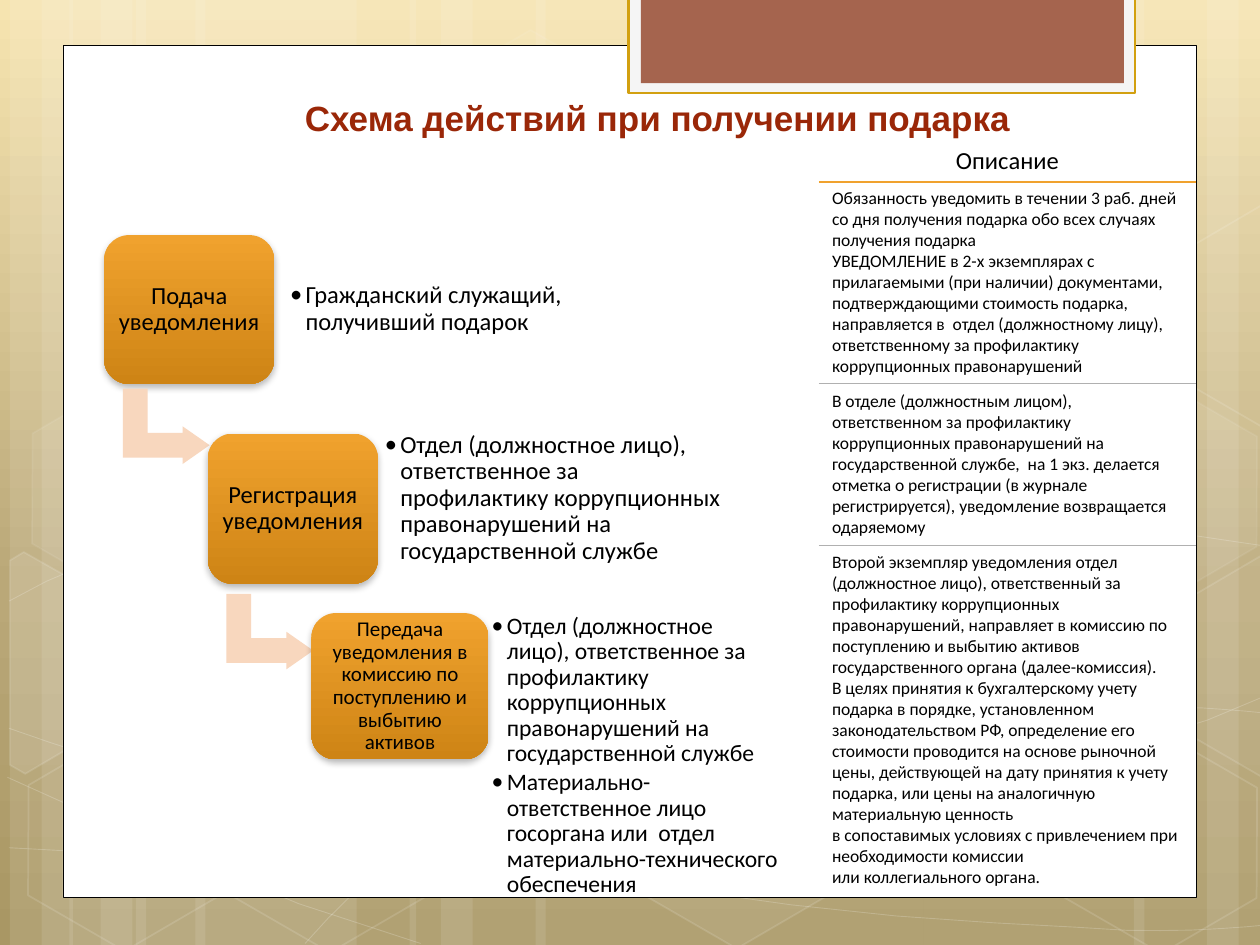
from lxml import etree
from pptx import Presentation
from pptx import util as u
from pptx.dml.color import RGBColor
from pptx.enum import shapes, text
from pptx.oxml.ns import qn

WHITE = RGBColor(0xFF, 0xFF, 0xFF)
BLACK = RGBColor(0, 0, 0)
SMOKE = RGBColor(0xF5, 0xF5, 0xF5)
GOLD = RGBColor(0xD2, 0xA0, 0x10)
BRICK = RGBColor(0xA5, 0x64, 0x4E)
RED = RGBColor(0x9A, 0x27, 0x08)
AMBER = RGBColor(0xF0, 0xA2, 0x2E)
OCHRE = RGBColor(0xCE, 0x84, 0x15)
PEACH = RGBColor(0xF8, 0xD7, 0xBE)
GREY = RGBColor(0xB0, 0xB0, 0xB0)
SAND = [(0, RGBColor(0xF6, 0xE4, 0xB0)), (62, RGBColor(0xBA, 0xA8, 0x78)),
        (100, RGBColor(0xA9, 0x97, 0x64))]
KIND = shapes.MSO_SHAPE
MID, TOP = text.MSO_ANCHOR.MIDDLE, text.MSO_ANCHOR.TOP
CENTER, LEFT = text.PP_ALIGN.CENTER, text.PP_ALIGN.LEFT

# Backdrop, in cm: stripes (left, width)
STRIPES = [(2.74, 4.45), (0.2, 1.27), (0.84, 2.11), (3.94, 4.45), (1.4, 1.27), (2.03, 2.11),
           (18.62, 4.45), (24.33, 1.27), (22.86, 2.11), (10.8, 7.82), (8.26, 1.27), (8.89, 2.11)]
# Each curve: a start, then three points per Bezier piece
CURVES = [
    [(0.18, 17.09), (1.55, 17.17), (2.92, 17.25), (4.83, 17.22), (6.73, 17.2), (9.09, 17.15),
     (11.63, 16.89), (14.17, 16.63), (17.78, 16.15), (20.12, 15.67), (22.43, 15.19),
     (24.82, 14.43), (25.58, 14)],
    [(0.18, 12.12), (0.91, 11.71), (1.65, 11.33), (3.07, 10.95), (4.52, 10.57), (6.58, 10.01),
     (8.81, 9.83), (11.07, 9.68), (13.82, 9.63), (16.61, 9.83), (19.41, 10.03),
     (24.05, 10.82), (25.58, 11.02)],
    [(0.15, 15.67), (3.23, 17.07), (6.27, 18.47), (8.48, 19.02)],
    [(0.18, 14.68), (0.97, 14.96), (1.78, 15.24), (3.25, 15.65), (4.72, 16.03), (6.93, 16.66),
     (9.07, 17.09), (11.18, 17.53), (13.84, 17.98), (15.95, 18.24), (18.06, 18.52),
     (20.32, 18.62), (21.67, 18.69), (22.99, 18.8), (23.34, 18.75), (24, 18.75),
     (24.66, 18.72), (25.12, 18.69), (25.58, 18.64)],
    [(6.15, 19.02), (6.6, 18.52), (7.06, 18.01), (7.67, 17.55), (8.28, 17.09), (9.14, 16.59),
     (9.86, 16.23), (10.57, 15.88), (11, 15.72), (11.94, 15.47), (12.85, 15.21),
     (14.55, 14.86), (15.44, 14.68), (16.36, 14.5), (16.48, 14.5), (17.27, 14.45),
     (18.06, 14.38), (19.3, 14.3), (20.17, 14.27), (21.5, 14.25), (22.9, 14.27),
     (24.21, 14.27), (24.66, 14.3), (25.1, 14.33), (25.55, 14.38)]]
# Hexagons: left, top, fill and line opacity
HEXES = [(8.48, 0.91, 4, 8), (12.62, 14.96, 6, 12), (0.28, 15.01, 0, 12), (0.36, 7.92, 7, 8),
         (4.42, 15.04, 0, 12), (21.18, 15.06, 0, 12), (21.18, 7.98, 7, 8)]
# Hexagons cut by the slide edge: fill opacity, corners
CUTS = [(10, [(0.2, 11.3), (0.48, 11.13), (2.44, 12.24), (2.41, 14.48), (0.51, 15.6), (0.2, 15.42)]),
        (4, [(23.52, 12.32), (25.43, 11.2), (25.63, 11.33), (25.63, 15.57), (25.45, 15.67), (23.52, 14.55)]),
        (0, [(23.52, 5.26), (25.43, 4.14), (25.65, 4.27), (25.63, 8.51), (25.45, 8.61), (23.52, 7.49)])]

OFFICE = ("Отдел (должностное лицо), ответственное за профилактику коррупционных "
          "правонарушений на государственной службе")
# Steps: label, size, box, bullet box, bullet size, anchor, bullets
STEPS = [
    ("Подача уведомления", 14, (2.1, 4.74, 3.43, 3), (5.7, 5.53, 7.42, 1.4), 14, MID,
     ["Гражданский служащий, получивший подарок"]),
    ("Регистрация уведомления", 14, (4.19, 8.74, 3.43, 3.03), (7.61, 8.36, 7.09, 3.38), 14, MID,
     [OFFICE]),
    ("Передача уведомления в комиссию по поступлению и выбытию активов", 12,
     (6.28, 12.36, 3.57, 2.95), (9.76, 12.23, 6.07, 5.85), 13.5, TOP,
     [OFFICE, "Материально-ответственное лицо госоргана или  отдел "
      "материально-технического обеспечения"])]
# Table rows: height, anchor, paragraphs
ROWS = [
    (0.84, TOP, ["Описание"]),
    (4.06, TOP, [
        "Обязанность уведомить в течении 3 раб. дней  со дня получения подарка обо всех "
        "случаях получения подарка",
        "УВЕДОМЛЕНИЕ в 2-х экземплярах с прилагаемыми (при наличии) документами, "
        "подтверждающими стоимость подарка, направляется в  отдел (должностному лицу), "
        "ответственному за профилактику коррупционных правонарушений"]),
    (3.27, MID, [
        "В отделе (должностным лицом), ответственном за профилактику коррупционных "
        "правонарушений на государственной службе,  на 1 экз. делается отметка о регистрации "
        "(в журнале регистрируется), уведомление возвращается одаряемому"]),
    (7.04, TOP, [
        "Второй экземпляр уведомления отдел (должностное лицо), ответственный за профилактику "
        "коррупционных правонарушений, направляет в комиссию по поступлению и выбытию активов  "
        "государственного органа (далее-комиссия).",
        "В целях принятия к бухгалтерскому учету подарка в порядке, установленном "
        "законодательством РФ, определение его стоимости проводится на основе рыночной цены, "
        "действующей на дату принятия к учету подарка, или цены на аналогичную материальную "
        "ценность\nв сопоставимых условиях с привлечением при необходимости комиссии\n"
        "или коллегиального органа."])]


def add(root, tag, **atts):
    return etree.SubElement(root, qn(tag), {k: str(v) for k, v in atts.items()})


def blend(fill, root, stops):
    """Top-down gradient."""
    fill.gradient()
    fill.gradient_angle = 270
    stack = root.find(".//" + qn("a:gsLst"))
    stack[:] = []
    for pos, tone in stops:
        add(add(stack, "a:gs", pos=pos * 1000), "a:srgbClr", val=tone)


def style(shape, fill=None, line=None, width=0.5, clear=None, faint=None):
    """Flat look; clear and faint are fill and line opacity in percent."""
    shape.shadow.inherit = False
    for part, tone, alpha, tag in ((shape.fill, fill, clear, "a:solidFill"),
                                   (shape.line.fill, line, faint, "a:ln/a:solidFill")):
        if tone is None or alpha == 0:
            part.background()
            continue
        part.solid()
        part.fore_color.rgb = tone
        if alpha:
            steps = "/".join(qn(t) for t in tag.split("/"))
            add(shape._element.spPr.find(steps)[0], "a:alpha", val=alpha * 1000)
    if line is not None:
        shape.line.width = u.Pt(width)
    return shape


def block(slide, kind, spot, **look):
    return style(slide.shapes.add_shape(kind, *map(u.Cm, spot)), **look)


def trace(slide, dots, closed, **look):
    pts = [(u.Cm(x), u.Cm(y)) for x, y in dots]
    pen = slide.shapes.build_freeform(*pts[0])
    pen.add_line_segments(pts[1:], close=closed)
    return style(pen.convert_to_shape(), **look)


def bend(pts, n=3):
    """Points along joined cubic Bezier pieces."""
    dots = [pts[0]]
    for i in range(0, len(pts) - 1, 3):
        for t in (k / n for k in range(1, n + 1)):
            mix = ((1 - t) ** 3, 3 * t * (1 - t) ** 2, 3 * t * t * (1 - t), t ** 3)
            dots.append(tuple(sum(m * p[a] for m, p in zip(mix, pts[i:i + 4])) for a in (0, 1)))
    return dots


def write(frame, paras, size, align=LEFT, space=0.9, bullet=False, after=0,
          face="Calibri", tone=BLACK, bold=False):
    for i, words in enumerate(paras):
        para = frame.add_paragraph() if i else frame.paragraphs[0]
        para.alignment, para.line_spacing, para.space_after = align, space, u.Pt(after)
        if bullet:
            props = para._p.get_or_add_pPr()
            props.set("marL", str(u.Cm(0.31)))
            props.set("indent", str(u.Cm(-0.31)))
            add(props, "a:buFont", typeface=face)
            add(props, "a:buChar", char="•")
        for j, part in enumerate(words.split("\n")):
            if j:
                para.add_line_break()
            run = para.add_run()
            run.text = part
            font = run.font
            font.size, font.name, font.bold = u.Pt(size), face, bold
            font.color.rgb = tone


def inset(frame, gap, anchor):
    frame.word_wrap, frame.vertical_anchor = True, anchor
    frame.margin_left = frame.margin_right = frame.margin_top = frame.margin_bottom = u.Cm(gap)


def scene(slide):
    blend(slide.background.fill, slide.element, SAND)
    for left, width in STRIPES:
        block(slide, KIND.RECTANGLE, (left, 0, width, 19.05), fill=WHITE, clear=10)
    for pts in CURVES:
        trace(slide, bend(pts), False, line=WHITE, faint=20)
    for left, top, clear, faint in HEXES:
        hexa = block(slide, KIND.HEXAGON, (left, top, 4.45, 3.86), fill=WHITE, line=WHITE,
                     width=1, clear=clear, faint=faint)
        hexa.adjustments[0], hexa.adjustments[1] = 0.285, 1.155
        hexa.rotation = 30
    for clear, dots in CUTS:
        trace(slide, dots, True, fill=WHITE, line=WHITE, width=1, clear=clear, faint=12)
    # White sheet and the tab on top of it
    block(slide, KIND.RECTANGLE, (1.27, 0.91, 22.86, 17.19), fill=WHITE, line=BLACK)
    block(slide, KIND.RECTANGLE, (12.67, -0.05, 10.21, 1.93), fill=SMOKE, line=GOLD, width=1.25)
    block(slide, KIND.RECTANGLE, (12.92, -0.05, 9.74, 1.73), fill=BRICK)


def head(slide, words):
    title = slide.shapes.title
    slide.shapes._spTree.append(title._element)
    title.left, title.top, title.width, title.height = map(u.Cm, (5.89, 1.93, 15.01, 0.99))
    frame = title.text_frame
    frame.word_wrap, frame.vertical_anchor = True, text.MSO_ANCHOR.BOTTOM
    write(frame, [words], 20, space=1, face="Arial", tone=RED, bold=True)


def step(slide, label, size, spot, side, small, anchor, items):
    card = block(slide, KIND.ROUNDED_RECTANGLE, spot)
    blend(card.fill, card._element, [(0, AMBER), (100, OCHRE)])
    glow = add(card._element.spPr.find(qn("a:effectLst")), "a:outerShdw", blurRad=u.Pt(4),
               dist=u.Pt(2), dir=5400000, rotWithShape=0)
    add(add(glow, "a:srgbClr", val=BLACK), "a:alpha", val=28000)
    inset(card.text_frame, 0.13, MID)
    write(card.text_frame, [label], size, CENTER)
    note = slide.shapes.add_textbox(*map(u.Cm, side)).text_frame
    inset(note, 0.15, anchor)
    write(note, items, small, bullet=True, after=2)


def arrow(slide, i):
    spot = (2.59 + 2.09 * i, 7.72 + 4.14 * i, 1.52, 1.75)
    bent = block(slide, KIND.BENT_UP_ARROW, spot, fill=PEACH)
    bent.rotation = 90
    for k, val in enumerate((0.328, 0.25, 0.358)):
        bent.adjustments[k] = val


def edge(cell, tag, tone, width):
    """Cell border; cells get their fill afterwards."""
    line = add(cell._tc.get_or_add_tcPr(), tag, w=u.Pt(width))
    add(add(line, "a:solidFill"), "a:srgbClr", val=tone)


def grid(slide):
    size = sum(row[0] for row in ROWS)
    table = slide.shapes.add_table(len(ROWS), 1, *map(u.Cm, (16.52, 2.82, 7.58, size))).table
    rules = [(AMBER, 1), (GREY, 0.5), (GREY, 0.5)]
    for i, (height, anchor, paras) in enumerate(ROWS):
        table.rows[i].height = u.Cm(height)
        cell = table.cell(i, 0)
        cell.vertical_anchor = anchor
        if i:
            edge(cell, "a:lnT", *rules[i - 1])
        if i < len(rules):
            edge(cell, "a:lnB", *rules[i])
        cell.fill.solid()
        cell.fill.fore_color.rgb = WHITE
        if i:
            write(cell.text_frame, paras, 10, space=u.Pt(12))
        else:
            write(cell.text_frame, paras, 14, CENTER, space=1)


def main():
    deck = Presentation()
    deck.slide_width, deck.slide_height = u.Cm(25.4), u.Cm(19.05)
    slide = deck.slides.add_slide(deck.slide_layouts[5])
    scene(slide)
    head(slide, "Схема действий при получении подарка")
    for i, item in enumerate(STEPS):
        if i:
            arrow(slide, i - 1)
        step(slide, *item)
    grid(slide)
    deck.save("out.pptx")


if __name__ == "__main__":
    main()
